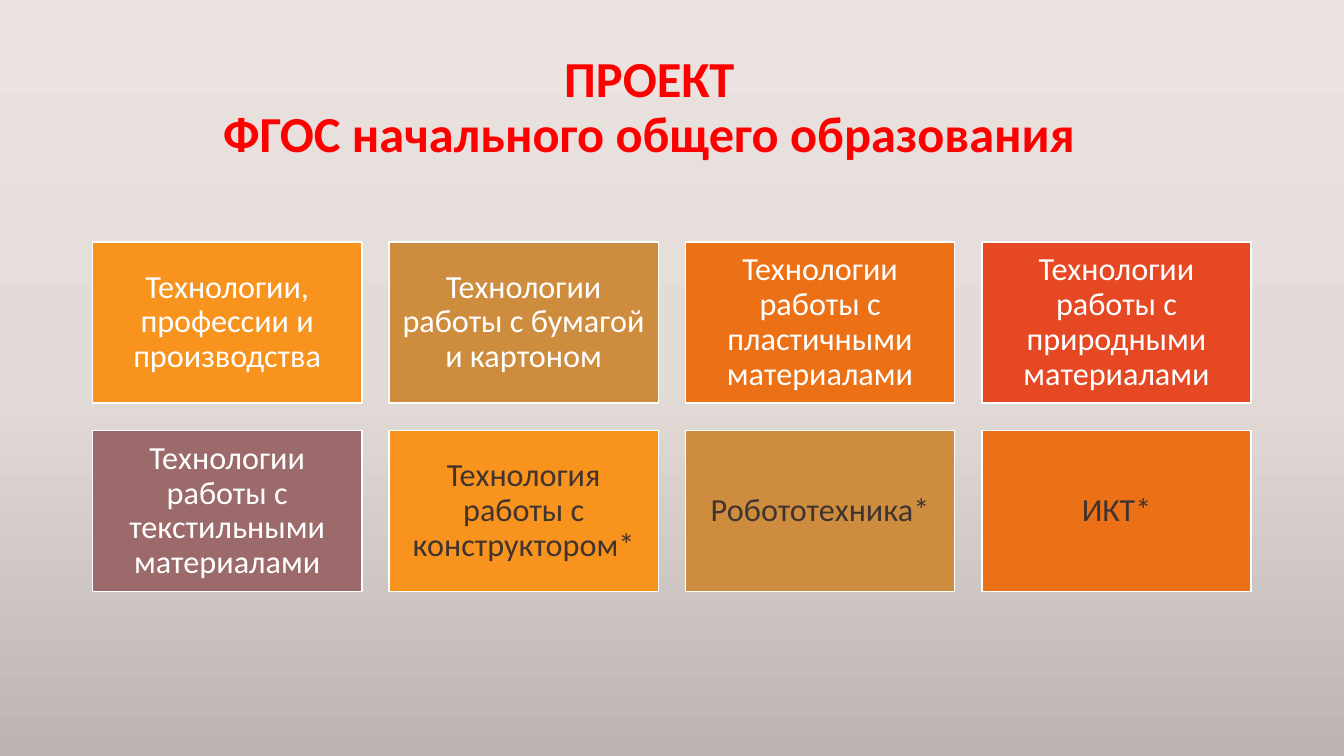
from copy import deepcopy

from pptx import Presentation
from pptx import util as u
from pptx.dml.color import RGBColor
from pptx.enum import shapes, text
from pptx.oxml import ns

WHITE, DARK, RED = "FFFFFF", "41342F", "FF0000"
COLUMNS = 4
CARD_LEFT, CARD_TOP = 0.92, 2.4
CARD_WIDTH, CARD_HEIGHT = 2.67, 1.6
GAP = 0.27
BACKGROUND = [(0, "EBE3DF"), (0.5, "E2DBD8"), (1, "BCB5B2")]
CARDS = [
    ("Технологии, профессии и производства", "F8931D", WHITE),
    ("Технологии работы с бумагой и картоном", "CE8D3E", WHITE),
    ("Технологии работы с пластичными материалами", "EC7016", WHITE),
    ("Технологии работы с природными материалами", "E64823", WHITE),
    ("Технологии работы с текстильными материалами", "9C6A6A", WHITE),
    ("Технология работы с конструктором*", "F8931D", DARK),
    ("Робототехника*", "CE8D3E", DARK),
    ("ИКТ*", "EC7016", DARK),
]


def colour(value):
    """Turn a hex string into a colour."""
    return RGBColor.from_string(value)


def paint_background(page):
    """Fill the page with a vertical three-stop gradient."""
    fill = page.background.fill
    fill.gradient()
    fill.gradient_angle = 270
    stop_list = page.element.find(".//" + ns.qn("a:gsLst"))
    stop_list.append(deepcopy(stop_list[0]))
    for stop, (position, value) in zip(fill.gradient_stops, BACKGROUND):
        stop.position = position
        stop.color.rgb = colour(value)


def write(shape, words, size, value, bold=False):
    """Write one centred paragraph into a shape."""
    frame = shape.text_frame
    frame.word_wrap = True
    frame.auto_size = text.MSO_AUTO_SIZE.NONE
    frame.vertical_anchor = text.MSO_ANCHOR.MIDDLE
    para = frame.paragraphs[0]
    para.text = words
    para.alignment = text.PP_ALIGN.CENTER
    para.line_spacing = 0.9
    for span in para.runs:
        span.font.name = "Calibri"
        span.font.size = u.Pt(size)
        span.font.bold = bold
        span.font.color.rgb = colour(value)


def add_title(page, words):
    """Place and fill the title placeholder."""
    title = page.shapes.title
    title.left, title.top = u.Inches(0.69), u.Inches(0.4)
    title.width, title.height = u.Inches(11.5), u.Inches(1.36)
    write(title, words, 36, RED, bold=True)


def add_card(page, index, words, fill, ink):
    """Add one coloured card at its place in the grid."""
    row, column = divmod(index, COLUMNS)
    card = page.shapes.add_shape(
        shapes.MSO_SHAPE.RECTANGLE,
        u.Inches(CARD_LEFT + column * (CARD_WIDTH + GAP)),
        u.Inches(CARD_TOP + row * (CARD_HEIGHT + GAP)),
        u.Inches(CARD_WIDTH),
        u.Inches(CARD_HEIGHT),
    )
    card.shadow.inherit = False
    card.fill.solid()
    card.fill.fore_color.rgb = colour(fill)
    card.line.color.rgb = colour(WHITE)
    card.line.width = u.Pt(1)
    frame = card.text_frame
    frame.margin_left = frame.margin_right = u.Inches(0.1)
    frame.margin_top = frame.margin_bottom = u.Inches(0.1)
    write(card, words, 23, ink)


def main():
    """Build the slide and save it."""
    deck = Presentation()
    deck.slide_width, deck.slide_height = u.Inches(13.33), u.Inches(7.5)
    page = deck.slides.add_slide(deck.slide_layouts.get_by_name("Title Only"))
    paint_background(page)
    add_title(page, "ПРОЕКТ\nФГОС начального общего образования")
    for index, (words, fill, ink) in enumerate(CARDS):
        add_card(page, index, words, fill, ink)
    deck.save("out.pptx")


if __name__ == "__main__":
    main()
